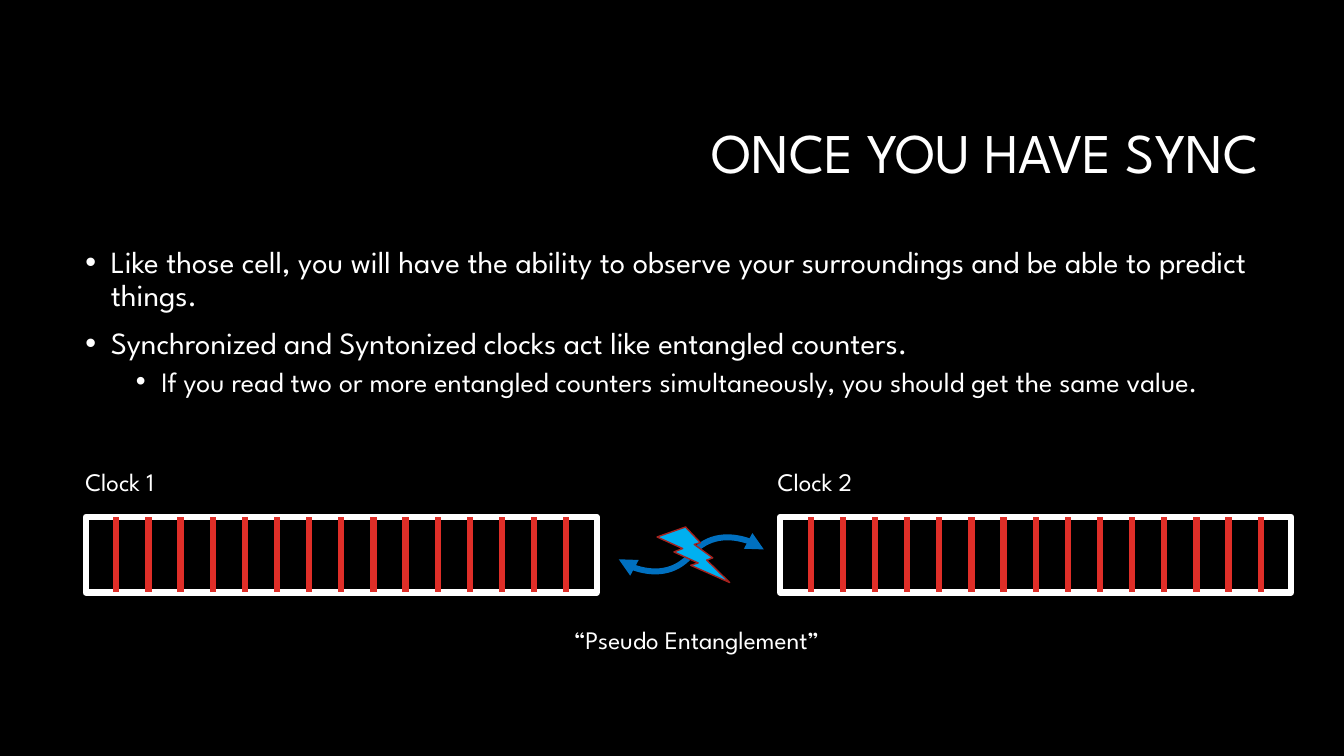
"""Builds the slide on synchronised clocks acting like entangled counters."""
from dataclasses import dataclass

from pptx import Presentation
from pptx.dml.color import RGBColor
from pptx.enum.shapes import MSO_CONNECTOR as CXN, MSO_SHAPE as SHAPE
from pptx.enum.text import MSO_ANCHOR as ANCHOR, MSO_AUTO_SIZE as FIT, PP_ALIGN as ALIGN
from pptx.oxml.ns import qn
from pptx.util import Cm, Pt
from lxml.etree import SubElement


@dataclass(frozen=True)
class Theme:
    font: str = "League Spartan"
    back: str = "000000"
    text: str = "FFFFFF"
    tick: str = "DF2E28"
    arrow: str = "0070C0"
    bolt: str = "00B0F0"
    bolt_edge: str = "A5221E"
    title: int = 40
    bullet: int = 22
    sub_bullet: int = 20
    label: int = 18
    bar: float = 4.5


def rgb(color):
    return RGBColor.from_string(color)


def write(p, text, *, font, size, color, align=ALIGN.LEFT, spacing=None, before=0):
    p.alignment = align
    p.line_spacing = spacing
    p.space_before = Pt(before)
    r = p.add_run()
    r.text = text
    r.font.name, r.font.size = font, Pt(size)
    r.font.color.rgb = rgb(color)


def add_bullet(p, margin):
    pPr = p._p.get_or_add_pPr()
    pPr.set("marL", str(Cm(margin)))
    pPr.set("indent", str(-Cm(0.64)))
    SubElement(pPr, qn("a:buFont"), typeface="Arial")
    SubElement(pPr, qn("a:buChar"), char="•")


class Deck:
    def __init__(self, theme):
        self.theme = theme
        self.prs = Presentation()
        self.prs.slide_width, self.prs.slide_height = Cm(33.87), Cm(19.05)
        self.slide = self.prs.slides.add_slide(self.prs.slide_layouts[1])
        fill = self.slide.background.fill
        fill.solid()
        fill.fore_color.rgb = rgb(theme.back)

    def text(self, p, text, size, **fmt):
        write(p, text, font=self.theme.font, size=size, color=self.theme.text, **fmt)

    def place(self, sp, x, y, w, h):
        sp.left, sp.top, sp.width, sp.height = Cm(x), Cm(y), Cm(w), Cm(h)
        tf = sp.text_frame
        tf.word_wrap, tf.auto_size = True, FIT.NONE
        return tf

    def title(self, text, *box):
        tf = self.place(self.slide.shapes.title, *box)
        tf.vertical_anchor = ANCHOR.MIDDLE
        self.text(tf.paragraphs[0], text, self.theme.title, align=ALIGN.RIGHT, spacing=0.9)

    def body(self, items, *box):
        tf = self.place(self.slide.placeholders[1], *box)
        tf.vertical_anchor = ANCHOR.TOP
        levels = ((0.64, self.theme.bullet, 10), (1.91, self.theme.sub_bullet, 5))
        for i, (level, text) in enumerate(items):
            p = tf.add_paragraph() if i else tf.paragraphs[0]
            margin, size, before = levels[level]
            p.level = level
            add_bullet(p, margin)
            self.text(p, text, size, spacing=0.9, before=before if i else 0)

    def label(self, text, x, y, w, align=ALIGN.LEFT):
        sp = self.slide.shapes.add_textbox(Cm(x), Cm(y), Cm(w), Cm(1.02))
        tf = sp.text_frame
        tf.word_wrap, tf.auto_size = True, FIT.SHAPE_TO_FIT_TEXT
        self.text(tf.paragraphs[0], text, self.theme.label, align=align)

    def group(self):
        return self.slide.shapes.add_group_shape().shapes

    def shape(self, shapes, kind, x, y, w, h, line, width, fill=None):
        sp = shapes.add_shape(kind, Cm(x), Cm(y), Cm(w), Cm(h))
        sp.shadow.inherit = False
        if fill:
            sp.fill.solid()
            sp.fill.fore_color.rgb = rgb(fill)
        else:
            sp.fill.background()
        sp.line.color.rgb, sp.line.width = rgb(line), Pt(width)
        return sp

    def connector(self, shapes, kind, x1, y1, x2, y2, color, width):
        cxn = shapes.add_connector(kind, Cm(x1), Cm(y1), Cm(x2), Cm(y2))
        cxn.line.color.rgb, cxn.line.width = rgb(color), Pt(width)
        SubElement(cxn._element.spPr, qn("a:effectLst"))
        return cxn

    def clock(self, x, y, w=12.88, h=1.9, ticks=15, pitch=0.81):
        shapes = self.group()
        box = self.shape(shapes, SHAPE.RECTANGLE, x, y, w, h, self.theme.text, self.theme.bar)
        middle = ticks // 2
        for i in range(ticks):
            tx = x + w / 2 + (i - middle) * pitch
            tick = self.connector(shapes, CXN.STRAIGHT, tx, y, tx, y + h,
                                  self.theme.tick, self.theme.bar)
            if i == middle:
                tick.begin_connect(box, 0)
                tick.end_connect(box, 2)

    def link(self):
        shapes = self.group()
        curve = self.connector(shapes, CXN.CURVE, 18.74, 12.7, 16.1, 15.24,
                               self.theme.arrow, 4.25)
        curve._element.spPr.find(qn("a:xfrm")).set("rot", str(220 * 60000))
        ln = curve.line._get_or_add_ln()
        for end in ("a:headEnd", "a:tailEnd"):
            SubElement(ln, qn(end), type="triangle")
        self.shape(shapes, SHAPE.LIGHTNING_BOLT, 16.56, 13.28, 1.83, 1.4,
                   self.theme.bolt_edge, 1, self.theme.bolt)


def main():
    deck = Deck(Theme())
    deck.title("ONCE YOU HAVE SYNC", 8.05, 2.13, 23.93, 3.58)
    deck.body([
        (0, "Like those cell, you will have the ability to observe your surroundings "
            "and be able to predict things."),
        (0, "Synchronized and Syntonized clocks act like entangled counters."),
        (1, "If you read two or more entangled counters simultaneously, "
            "you should get the same value."),
    ], 1.9, 6.1, 30.05, 11.18)
    for name, label_x, clock_x in (("Clock 1", 1.9, 2.16), ("Clock 2", 19.35, 19.66)):
        deck.clock(clock_x, 13.03)
        deck.label(name, label_x, 11.63, 3.45)
    deck.link()
    deck.label("“Pseudo Entanglement”", 13.54, 15.6, 8.03, ALIGN.CENTER)
    deck.prs.save("out.pptx")


if __name__ == "__main__":
    main()
